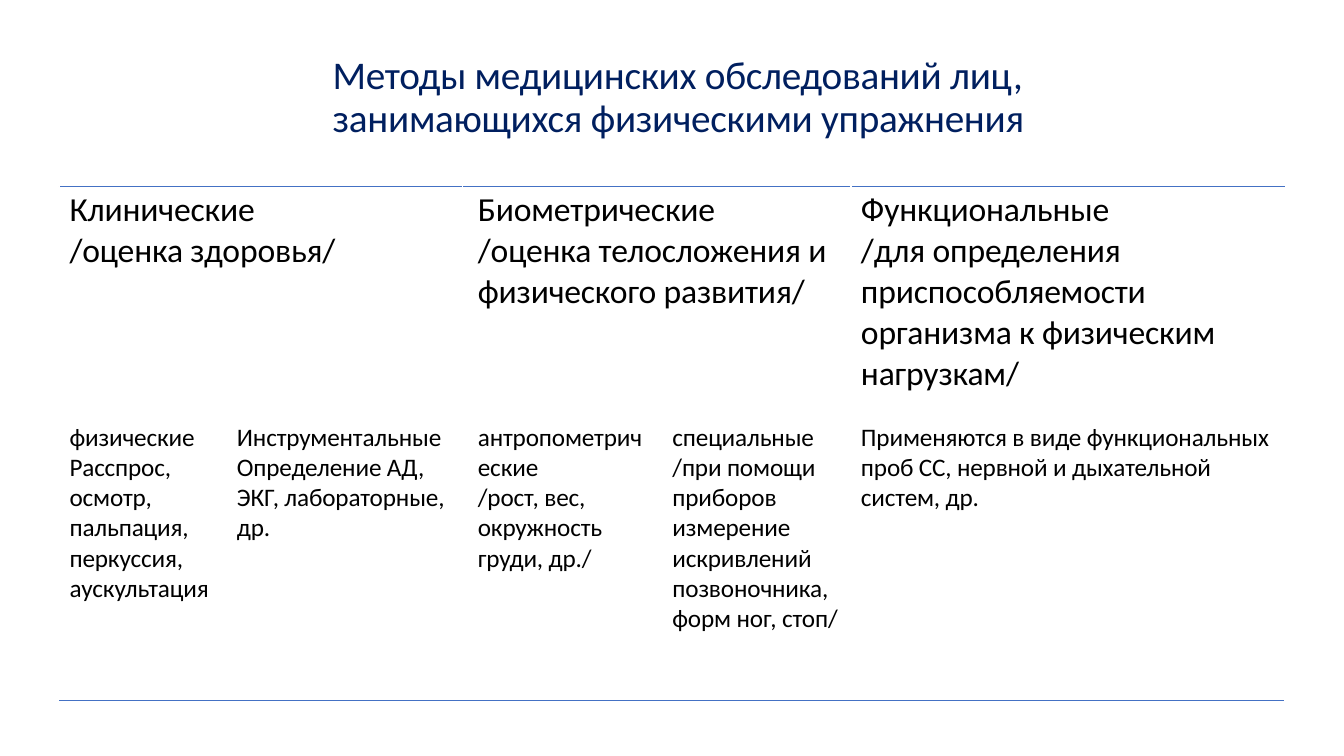
"""Build a slide with a table of medical examination methods."""
from typing import NamedTuple

from lxml import etree
from pptx import Presentation
from pptx import util as u
from pptx.dml import color
from pptx.enum import shapes, text
from pptx.oxml import ns

FONT = "Calibri"
HUES = {"title": "001F5F", "body": "000000", "rule": "4471C4"}
LEFT, WIDTH = 0.59, 12.15
ROWS = [2.23, 0.45, 0.3, 0.3, 0.3, 0.3, 0.3, 0.27]


class Column(NamedTuple):
    """A table column with its width, indent and lines."""
    width: float
    indent: float
    lines: list[str]


class Head(NamedTuple):
    """A method group over one or more columns."""
    first: int
    last: int
    words: str


COLUMNS = [
    Column(1.63, 0.1, ["физические", "Расспрос,", "осмотр,", "пальпация,",
                       "перкуссия,", "аускультация"]),
    Column(2.37, 0.13, ["Инструментальные", "Определение АД,",
                        "ЭКГ, лабораторные,", "др."]),
    Column(1.94, 0.15, ["антропометрич", "еские", "/рост, вес,",
                        "окружность", "груди, др./"]),
    Column(1.91, 0.14, ["специальные", "/при помощи", "приборов", "измерение",
                        "искривлений", "позвоночника,", "форм ног, стоп/"]),
    Column(4.31, 0.1, ["Применяются в виде функциональных",
                       "проб СС, нервной и дыхательной", "систем, др."]),
]
HEADS = [
    Head(0, 1, "Клинические\n/оценка здоровья/"),
    Head(2, 3, "Биометрические\n/оценка телосложения и\nфизического развития/"),
    Head(4, 4, "Функциональные\n/для определения\n"
               "приспособляемости организма к физическим\nнагрузкам/"),
]


def style(frame, size: float, hue: str, gap: float, pitch: float = 0) -> None:
    """Format every run of a text frame."""
    for para in frame.paragraphs:
        if pitch:
            para.line_spacing = u.Pt(pitch)
        for run in para.runs:
            font = run.font
            font.name, font.size = FONT, u.Pt(size)
            font.color.rgb = color.RGBColor.from_string(HUES[hue])
            font._element.set("spc", str(round(gap * 100)))


def pad(item, left: float, top: float) -> None:
    """Set the inner margins of a cell or text frame."""
    item.margin_left, item.margin_top = u.Inches(left), u.Inches(top)
    item.margin_right = item.margin_bottom = 0


def edge(cell) -> None:
    """Draw the top border of a cell."""
    line = etree.Element(ns.qn("a:lnT"), w=str(u.Pt(1)))
    fill = etree.SubElement(line, ns.qn("a:solidFill"))
    etree.SubElement(fill, ns.qn("a:srgbClr"), val=HUES["rule"])
    cell._tc.get_or_add_tcPr().insert(0, line)


def add_title(slide) -> None:
    """Add the slide title."""
    box = slide.shapes.add_textbox(u.Inches(1), u.Inches(0.48),
                                   u.Inches(11.33), u.Inches(1.17))
    frame = box.text_frame
    frame.word_wrap = True
    frame.vertical_anchor = text.MSO_ANCHOR.TOP
    pad(frame, 2.3, 0.07)
    frame.text = ("Методы медицинских обследований лиц, "
                  "занимающихся физическими упражнения")
    style(frame, 28, "title", -0.2, 30.3)


def add_grid(slide) -> None:
    """Add the table of methods."""
    shape = slide.shapes.add_table(len(ROWS), len(COLUMNS), u.Inches(LEFT),
                                   u.Inches(1.85), u.Inches(WIDTH),
                                   u.Inches(sum(ROWS)))
    grid = shape.table
    grid.first_row = grid.horz_banding = False
    for row, height in zip(grid.rows, ROWS):
        row.height = u.Inches(height)
    for c, column in enumerate(COLUMNS):
        grid.columns[c].width = u.Inches(column.width)
        for r in range(len(ROWS)):
            cell = grid.cell(r, c)
            cell.fill.background()
            pad(cell, column.indent, {0: 0.03, 1: 0.11}.get(r, 0))
            if r == 0:
                edge(cell)
            elif r <= len(column.lines):
                cell.text_frame.text = column.lines[r - 1]
                style(cell.text_frame, 18, "body", -0.1, 18.9 if r > 1 else 0)
            else:
                etree.SubElement(cell.text_frame.paragraphs[0]._p,
                                 ns.qn("a:endParaRPr"), sz="1200")
    for head in HEADS:
        cell = grid.cell(0, head.first)
        if head.last > head.first:
            cell.merge(grid.cell(0, head.last))
        cell.text_frame.text = head.words
        style(cell.text_frame, 24, "body", -0.1)


def add_rule(slide) -> None:
    """Add the line at the foot of the slide."""
    y = u.Inches(6.95)
    rule = slide.shapes.add_connector(shapes.MSO_CONNECTOR.STRAIGHT,
                                      u.Inches(LEFT), y,
                                      u.Inches(LEFT + WIDTH), y)
    rule.line.color.rgb = color.RGBColor.from_string(HUES["rule"])
    rule.line.width = u.Pt(1)
    etree.SubElement(rule._element.spPr, ns.qn("a:effectLst"))


def main() -> None:
    """Build and save the deck."""
    deck = Presentation()
    deck.slide_width, deck.slide_height = u.Inches(13.33), u.Inches(7.5)
    slide = deck.slides.add_slide(deck.slide_layouts[6])
    add_title(slide)
    add_grid(slide)
    add_rule(slide)
    deck.save("out.pptx")


if __name__ == "__main__":
    main()
